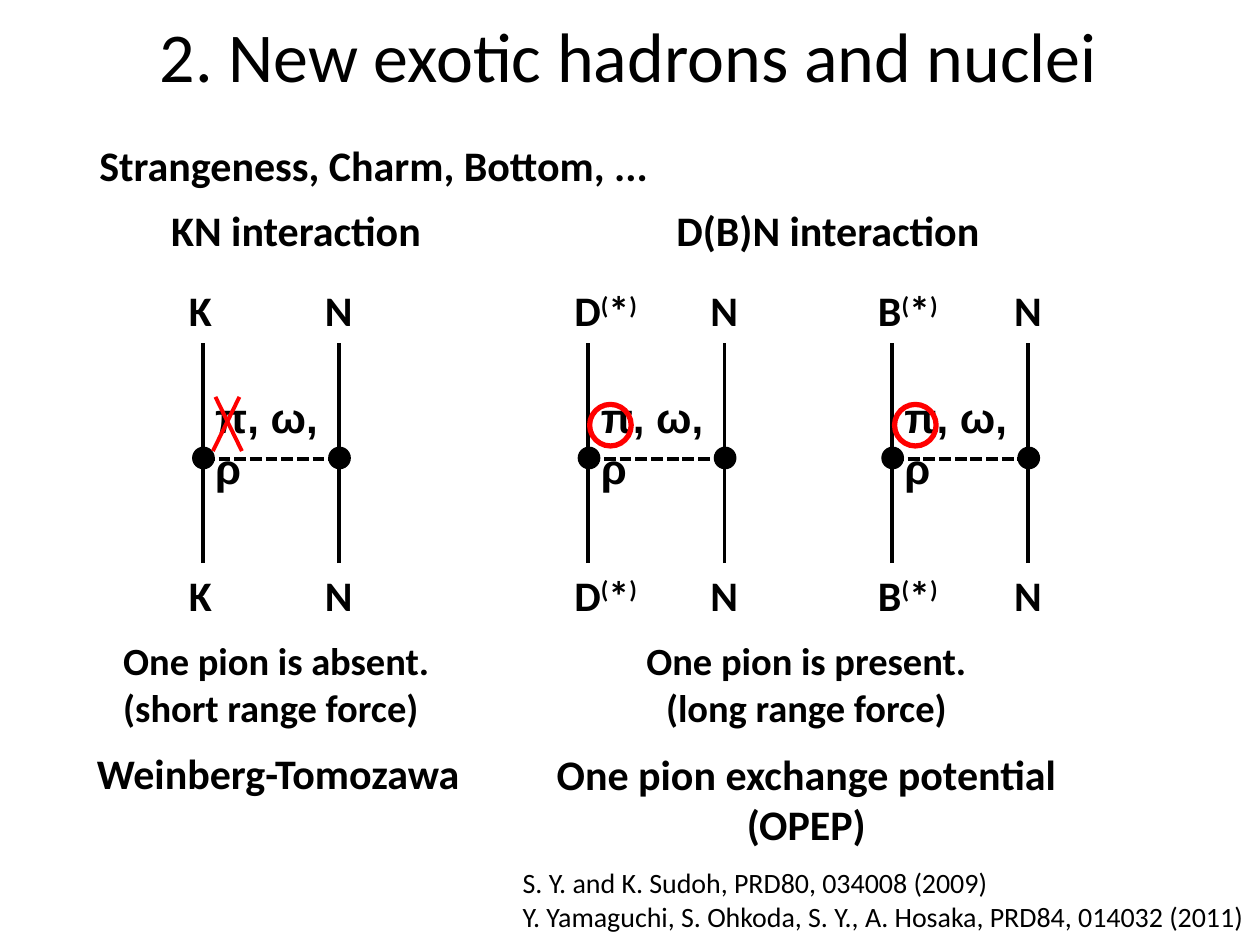
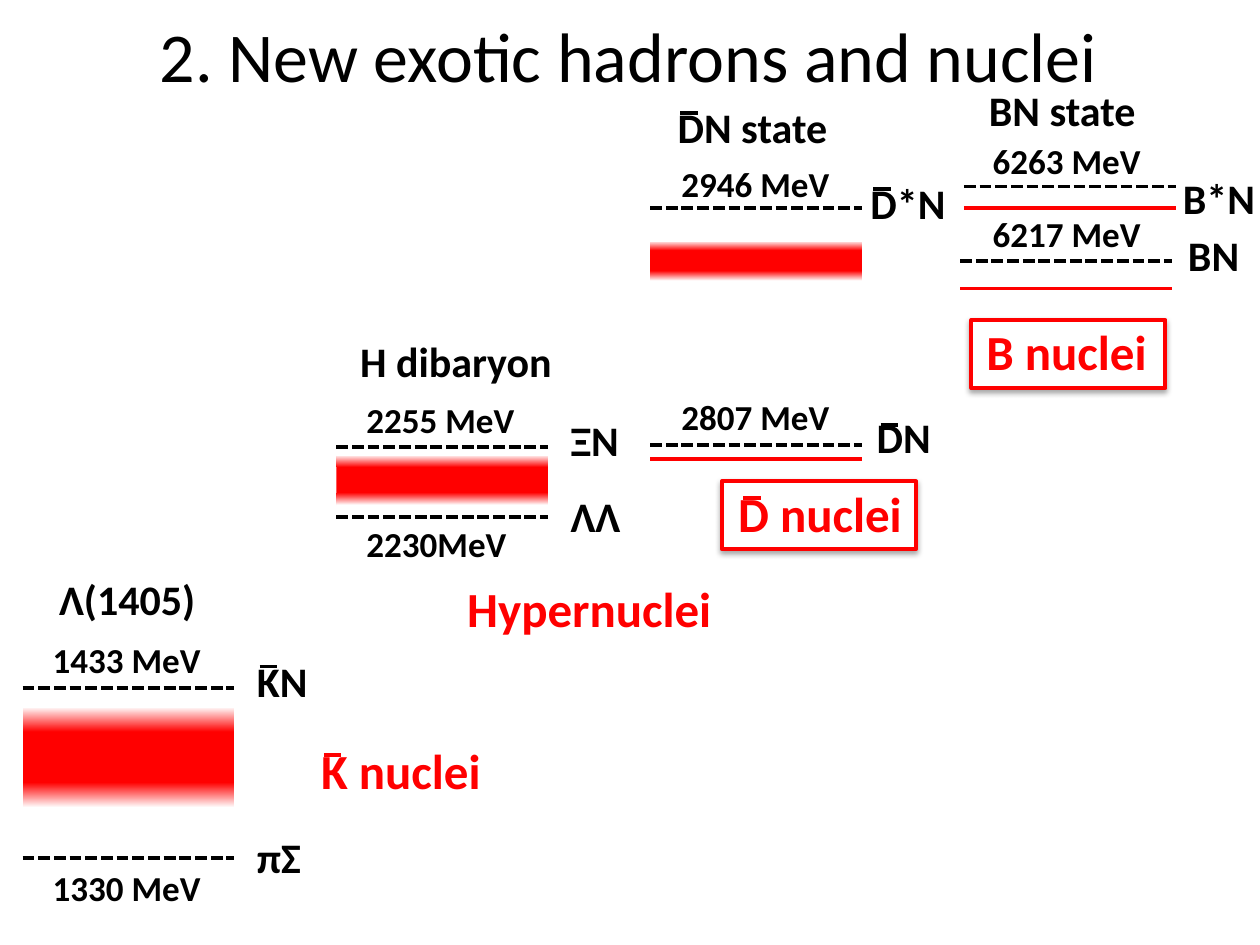
import dataclasses

import lxml.etree
import pptx
import pptx.dml.color
import pptx.enum.dml
import pptx.enum.shapes
import pptx.enum.text
import pptx.oxml.ns
import pptx.util

PX = 9144
TITLE = "2. New exotic hadrons and nuclei"
SHAPE = pptx.enum.shapes.MSO_SHAPE
ALIGN = pptx.enum.text.PP_ALIGN
qn = pptx.oxml.ns.qn


@dataclasses.dataclass(frozen=True)
class Theme:
    ink: str = "000000"
    accent: str = "FF0000"
    paper: str = "FFFFFF"
    font: str = "Calibri"
    symbol_font: str = "Arial"
    title: int = 40
    nuclei: int = 28
    label: int = 24
    remark: int = 22
    energy: int = 20
    source: int = 16
    line: float = 2.25
    ring: float = 3
    dot_line: float = 0.75


def rgb(color):
    return pptx.dml.color.RGBColor.from_string(color)


class Deck:
    def __init__(self, theme):
        self.theme = theme
        self.prs = pptx.Presentation()
        self.prs.slide_width = 1000 * PX
        self.prs.slide_height = 750 * PX
        self.s = None

    def slide(self, title):
        self.s = self.prs.slides.add_slide(self.prs.slide_layouts[6])
        self.text(117, 5, 766, [title], self.theme.title, bold=False, wrap=True)

    def text(self, x, y, w, lines, size=None, color=None, bold=True,
             font=None, align=ALIGN.LEFT, wrap=False):
        size = size or self.theme.label
        h = round(len(lines) * size * 1.22 / 0.72) + 10
        tf = self.s.shapes.add_textbox(x * PX, y * PX, w * PX, h * PX).text_frame
        tf.word_wrap = wrap
        for i, line in enumerate(lines):
            p = tf.add_paragraph() if i else tf.paragraphs[0]
            p.alignment = align
            p.font.size = pptx.util.Pt(size)
            p.font.bold = bold
            p.font.name = font or self.theme.font
            p.font.color.rgb = rgb(color or self.theme.ink)
            for part in self.split_raised(line):
                r = p.add_run()
                r.text = part
                if part in ("(", ")"):
                    r._r.get_or_add_rPr().set("baseline", "30000")

    def split_raised(self, line):
        if line.endswith("(*)"):
            return [line[:-3], "(", "*", ")"]
        return [line]

    def line(self, x1, y1, x2, y2, color=None, dashed=False):
        sp = self.s.shapes.add_connector(
            pptx.enum.shapes.MSO_CONNECTOR.STRAIGHT, x1 * PX, y1 * PX, x2 * PX, y2 * PX)
        sp.line.color.rgb = rgb(color or self.theme.ink)
        sp.line.width = pptx.util.Pt(self.theme.line)
        if dashed:
            sp.line.dash_style = pptx.enum.dml.MSO_LINE.SQUARE_DOT
        lxml.etree.SubElement(sp._element.spPr, qn("a:effectLst"))

    def shape(self, kind, x, y, w, h, fill=None, line=None, width=0):
        sp = self.s.shapes.add_shape(kind, x * PX, y * PX, w * PX, h * PX)
        sp.shadow.inherit = False
        if fill:
            sp.fill.solid()
            sp.fill.fore_color.rgb = rgb(fill)
        else:
            sp.fill.background()
        if line:
            sp.line.color.rgb = rgb(line)
            sp.line.width = pptx.util.Pt(width)
        else:
            sp.line.fill.background()
        return sp

    def dot(self, x, y):
        t = self.theme
        self.shape(SHAPE.OVAL, x, y, 17, 17, t.ink, t.ink, t.dot_line)

    def ring(self, x, y):
        self.shape(SHAPE.OVAL, x, y, 33, 33, None, self.theme.accent, self.theme.ring)

    def cross(self, x, y):
        self.line(x, y + 43, x + 21, y, self.theme.accent)
        self.line(x + 23, y + 43, x + 2, y, self.theme.accent)

    def shadow_box(self, x, y):
        t = self.theme
        sp = self.shape(SHAPE.RECTANGLE, x, y, 154, 54, t.paper, t.accent, t.line)
        effects = sp._element.spPr.find(qn("a:effectLst"))
        shadow = lxml.etree.SubElement(
            effects, qn("a:outerShdw"), blurRad="40000", dist="23000",
            dir="5400000", rotWithShape="0")
        black = lxml.etree.SubElement(shadow, qn("a:srgbClr"), val=t.ink)
        lxml.etree.SubElement(black, qn("a:alpha"), val="35000")

    def resonance(self, x, y, half):
        for top, angle in ((y, 90), (y + half, 270)):
            sp = self.shape(SHAPE.RECTANGLE, x, top, 168, half)
            sp.fill.gradient()
            sp.fill.gradient_angle = angle
            stops = ((0.5, self.theme.accent), (1, self.theme.paper))
            for stop, (position, color) in zip(sp.fill.gradient_stops, stops):
                stop.position = position
                stop.color.rgb = rgb(color)

    def level(self, x, y, color=None, dashed=True):
        self.line(x, y, x + 168, y, color, dashed)

    def overbar(self, x, y, color=None):
        self.line(x, y, x + 14, y, color)

    def exchange(self, x, meson, meson_width):
        for dx in (0, 108):
            self.line(x + dx, 447, x + dx, 272)
        self.line(x, 364, x + 108, 364, dashed=True)
        for y in (221, 447):
            self.text(x - 21, y, meson_width, [meson])
            self.text(x + 87, y, 42, ["N"])
        self.text(x, 306, 114, ["π, ω, ρ"], font=self.theme.symbol_font, wrap=True)
        for dx in (-8, 100):
            self.dot(x + dx, 355)


def interactions(d):
    t = d.theme
    d.slide(TITLE)
    d.text(69, 106, 460, ["Strangeness, Charm, Bottom, ..."])
    d.text(126, 157, 225, ["KN interaction"])
    d.text(527, 157, 275, ["D(B)N interaction"])
    for x, meson, width in ((161, "K", 39), (467, "D(*)", 72), (708, "B(*)", 70)):
        d.exchange(x, meson, width)
    d.cross(169, 315)
    for x in (468, 710):
        d.ring(x, 321)
    d.text(88, 501, 266, ["One pion is absent.", "(short range force)"], t.remark)
    d.text(490, 501, 300, ["One pion is present.", "(long range force)"],
           t.remark, align=ALIGN.CENTER)
    d.text(67, 588, 313, ["Weinberg-Tomozawa"])
    d.text(420, 589, 440, ["One pion exchange potential", "(OPEP)"], align=ALIGN.CENTER)
    d.text(405, 682, 598, ["S. Y. and K. Sudoh, PRD80, 034008 (2009)",
                           "Y. Yamaguchi, S. Ohkoda, S. Y., A. Hosaka, PRD84, 014032 (2011)"],
           t.source, bold=False, wrap=True)


def spectrum(d):
    t = d.theme
    d.slide(TITLE)
    for x, y in ((771, 254), (573, 382)):
        d.shadow_box(x, y)
    for x, y, half in ((18, 561, 40), (267, 361, 20), (516, 191, 16)):
        d.resonance(x, y, half)
    for x, y in ((18, 546), (18, 681), (267, 355), (267, 410),
                 (516, 353), (516, 165), (762, 207), (765, 148)):
        d.level(x, y)
    for x, y in ((516, 364), (762, 229), (765, 165)):
        d.level(x, y, t.accent, dashed=False)
    for x, y, w, label in (
            (37, 450, 129, "Λ(1405)"), (276, 261, 174, "H dibaryon"),
            (528, 76, 140, "DN state"), (775, 62, 140, "BN state"),
            (194, 515, 61, "KN"), (194, 655, 55, "πΣ"),
            (443, 324, 59, "ΞN"), (443, 384, 60, "ΛΛ"),
            (686, 322, 64, "DN"), (681, 136, 80, "D*N"),
            (933, 177, 61, "BN"), (929, 132, 78, "B*N")):
        d.text(x, y, w, [label])
    for x, y, w, energy in (
            (32, 502, 139, "1433 MeV"), (32, 683, 139, "1330 MeV"),
            (281, 311, 139, "2255 MeV"), (281, 410, 132, "2230MeV"),
            (531, 309, 139, "2807 MeV"), (531, 124, 139, "2946 MeV"),
            (778, 164, 139, "6217 MeV"), (778, 106, 139, "6263 MeV")):
        d.text(x, y, w, [energy], t.energy)
    for x, y, w, nuclei in (
            (245, 583, 148, "K nuclei"), (361, 454, 216, "Hypernuclei"),
            (576, 379, 151, "D nuclei"), (773, 250, 149, "B nuclei")):
        d.text(x, y, w, [nuclei], t.nuclei, t.accent)
    for x, y in ((206, 529), (699, 337), (540, 90), (693, 150)):
        d.overbar(x, y)
    for x, y in ((257, 599), (590, 395)):
        d.overbar(x, y, t.accent)


def main():
    d = Deck(Theme())
    interactions(d)
    spectrum(d)
    d.prs.save("out.pptx")


if __name__ == "__main__":
    main()
